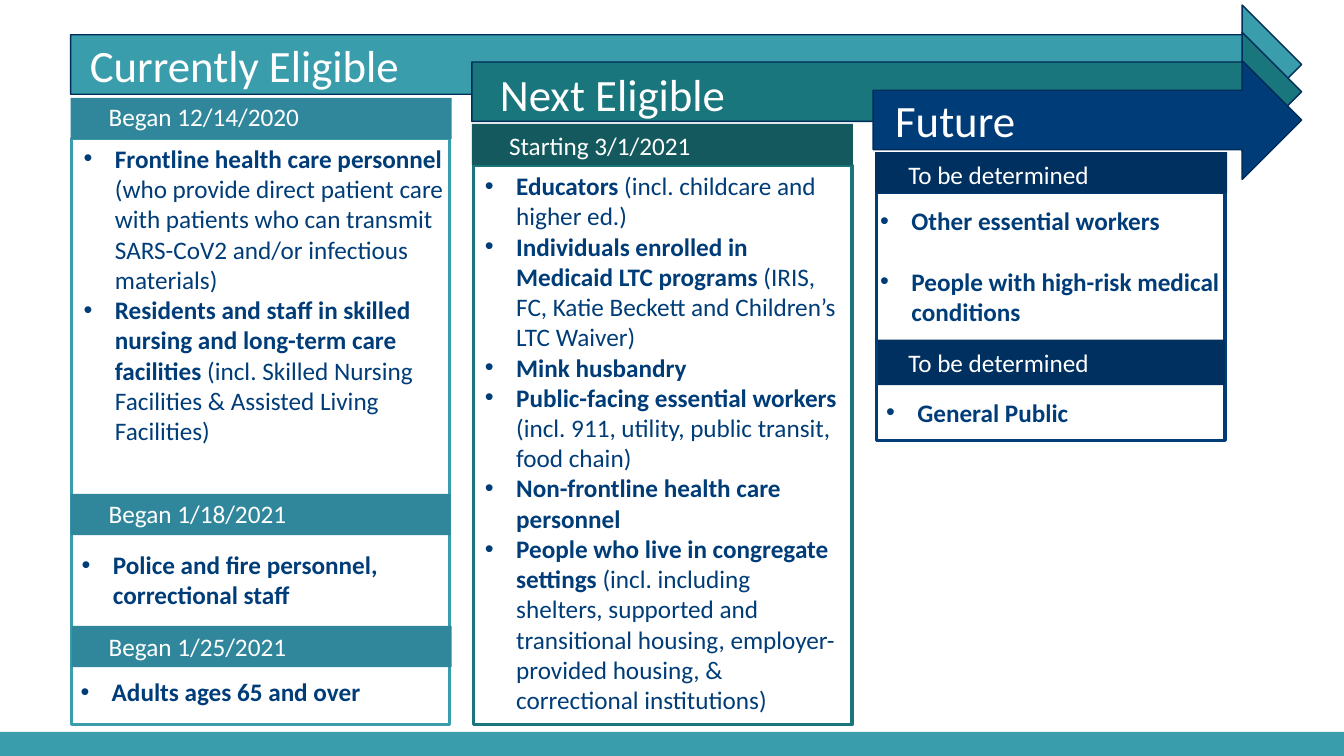
"""Builds a slide showing vaccine eligibility in three overlapping phases."""
from dataclasses import dataclass

from lxml import etree
from pptx import Presentation
from pptx.dml.color import RGBColor
from pptx.enum.shapes import MSO_SHAPE
from pptx.enum.text import MSO_ANCHOR, MSO_AUTO_SIZE, PP_ALIGN
from pptx.oxml.ns import qn
from pptx.util import Emu, Pt

RECT, ARROW = MSO_SHAPE.RECTANGLE, MSO_SHAPE.RIGHT_ARROW
TOP, LEFT, GROW = MSO_ANCHOR.TOP, PP_ALIGN.LEFT, MSO_AUTO_SIZE.SHAPE_TO_FIT_TEXT

EMU_PER_PX = 9144
COMPARISON_LAYOUT = 4
FONT = "Calibri"
HEADING_SIZE, TEXT_SIZE = 32, 18
INDENT = 31
COLORS = {
    "teal": "399DAC",
    "green": "19767C",
    "navy": "003D78",
    "teal bar": "30879C",
    "green bar": "13595D",
    "navy bar": "003060",
    "edge": "002D59",
    "white": "FFFFFF",
}
FRAME_FORMAT = {"word_wrap": True, "vertical_anchor": TOP, "auto_size": GROW}

Box = tuple[int, int, int, int]


@dataclass(frozen=True)
class Block:
    """A filled or outlined shape."""
    box: Box
    fill: str = ""
    line: str = ""
    weight: float = 0
    kind: MSO_SHAPE = RECT


@dataclass(frozen=True)
class Label:
    """A single line of white text."""
    text: str
    box: Box
    size: int = TEXT_SIZE


@dataclass(frozen=True)
class Listing:
    """A bulleted list whose items have a bold part and a plain part."""
    box: Box
    items: tuple[tuple[str, str], ...]
    gap: float = 0


ARROW_RIGHT, ARROW_HEIGHT = 1291, 118
ARROWS = [
    Block((left, top, ARROW_RIGHT - left, ARROW_HEIGHT), fill, "edge", 1, ARROW)
    for left, top, fill in ((70, 5, "teal"), (468, 32, "green"), (866, 60, "navy"))
]
BLOCKS = [
    Block((0, 726, 1333, 24), "teal"),
    *ARROWS,
    Block((470, 164, 375, 555), line="green", weight=2.25),
    Block((869, 191, 346, 246), line="navy", weight=2.25),
    Block((71, 137, 375, 582), line="teal", weight=2.25),
    Block((70, 97, 378, 41), "teal bar"),
    Block((468, 123, 378, 41), "green bar"),
    Block((868, 151, 349, 41), "navy bar"),
    Block((70, 490, 377, 41), "teal bar"),
    Block((71, 621, 377, 41), "teal bar"),
    Block((871, 337, 344, 45), "navy bar"),
]
TITLE = Label("Currently Eligible", (79, 32, 361, 64), HEADING_SIZE)
LABELS = [
    Label("Next Eligible", (486, 61, 349, 64), HEADING_SIZE),
    Label("Future", (878, 87, 332, 64), HEADING_SIZE),
    Label("Began 12/14/2020", (98, 96, 350, 41)),
    Label("Began 1/18/2021", (98, 489, 350, 41)),
    Label("Began 1/25/2021", (98, 621, 350, 41)),
    Label("Starting 3/1/2021", (495, 124, 352, 41)),
    Label("To be determined", (891, 153, 319, 41)),
    Label("To be determined", (891, 340, 319, 41)),
]
LISTINGS = [
    Listing((73, 137, 379, 313), (
        ("Frontline health care personnel ",
         "(who provide direct patient care with patients who can transmit "
         "SARS-CoV2 and/or infectious materials)"),
        ("Residents and staff in skilled nursing and long-term care facilities",
         " (incl. Skilled Nursing Facilities & Assisted Living Facilities)"),
    )),
    Listing((471, 164, 375, 555), (
        ("Educators ", "(incl. childcare and higher ed.)"),
        ("Individuals enrolled in Medicaid LTC programs ",
         "(IRIS, FC, Katie Beckett and Children’s LTC Waiver)"),
        ("Mink husbandry", ""),
        ("Public-facing essential workers ",
         "(incl. 911, utility, public transit, food chain)"),
        ("Non-frontline health care personnel", ""),
        ("People who live in congregate settings ",
         "(incl. including shelters, supported and transitional housing, "
         "employer-provided housing, & correctional institutions)"),
    )),
    Listing((863, 199, 361, 131), (
        ("Other essential workers", ""),
        ("People with high-risk medical conditions", ""),
    ), gap=21.6),
    Listing((71, 540, 375, 71), (("Police and fire personnel, correctional staff", ""),)),
    Listing((70, 666, 375, 40), (("Adults ages 65 and over", ""),)),
    Listing((869, 389, 361, 40), (("General Public", ""),)),
]


def px(length: int) -> Emu:
    return Emu(length * EMU_PER_PX)


def color(name: str) -> RGBColor:
    return RGBColor.from_string(COLORS[name])


def draw_block(page, block: Block) -> None:
    shape = page.shapes.add_shape(block.kind, *map(px, block.box))
    shape.shadow.inherit = False
    if block.fill:
        shape.fill.solid()
        shape.fill.fore_color.rgb = color(block.fill)
    else:
        shape.fill.background()
    if block.line:
        shape.line.color.rgb = color(block.line)
        shape.line.width = Pt(block.weight)
    else:
        shape.line.fill.background()


def place_text(page, box: Box, holder=None):
    """Returns the text frame of a moved placeholder or of a new text box."""
    if holder is None:
        holder = page.shapes.add_textbox(*map(px, box))
    else:
        page.shapes.element.append(holder.element)
        for name, length in zip(("left", "top", "width", "height"), box):
            setattr(holder, name, px(length))
    for name, value in FRAME_FORMAT.items():
        setattr(holder.text_frame, name, value)
    return holder.text_frame


def add_span(para, text: str, size: int, tint: str, bold: bool) -> None:
    span = para.add_run()
    span.text = text
    for name, value in {"name": FONT, "size": Pt(size), "bold": bold}.items():
        setattr(span.font, name, value)
    span.font.color.rgb = color(tint)


def draw_label(page, label: Label, holder=None) -> None:
    para = place_text(page, label.box, holder).paragraphs[0]
    para.alignment = LEFT
    add_span(para, label.text, label.size, "white", False)


def add_bullet(para) -> None:
    properties = para._p.get_or_add_pPr()
    properties.set("marL", str(px(INDENT)))
    properties.set("indent", str(-px(INDENT)))
    etree.SubElement(properties, qn("a:buFont")).set("typeface", "Arial")
    etree.SubElement(properties, qn("a:buChar")).set("char", "•")


def draw_listing(page, listing: Listing, holder=None) -> None:
    frame = place_text(page, listing.box, holder)
    for index, (strong, plain) in enumerate(listing.items):
        para = frame.add_paragraph() if index else frame.paragraphs[0]
        add_bullet(para)
        para.alignment = LEFT
        para.space_before = Pt(listing.gap if index else 0)
        add_span(para, strong, TEXT_SIZE, "navy", True)
        if plain:
            add_span(para, plain, TEXT_SIZE, "navy", False)


def main() -> None:
    deck = Presentation()
    deck.slide_width, deck.slide_height = px(1333), px(750)
    page = deck.slides.add_slide(deck.slide_layouts[COMPARISON_LAYOUT])
    title, *bodies = page.placeholders
    for block in BLOCKS:
        draw_block(page, block)
    draw_label(page, TITLE, title)
    for label in LABELS:
        draw_label(page, label)
    for listing in LISTINGS:
        draw_listing(page, listing, bodies.pop(0) if bodies else None)
    deck.save("out.pptx")


if __name__ == "__main__":
    main()
